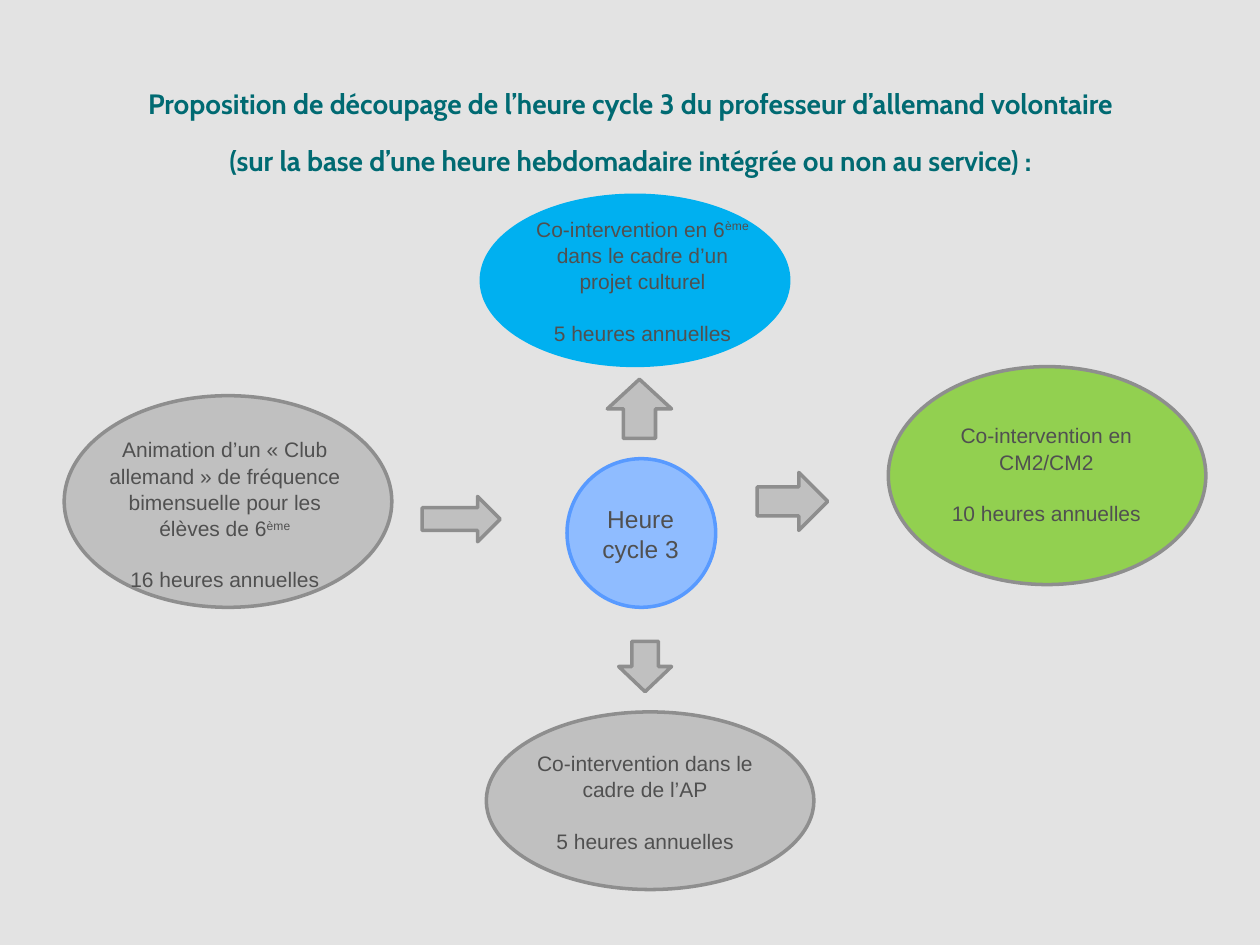
"""Build a slide showing how the cycle 3 teaching hour is divided."""
from pptx import Presentation
from pptx.dml.color import RGBColor
from pptx.enum import shapes, text
from pptx.util import Inches, Pt

GRAY, DARK_GRAY, TEXT_GRAY = "C0C0C0", "8E8E8E", "505050"
KIND = shapes.MSO_SHAPE


def color(value):
    return RGBColor.from_string(value)


def add_label(box, paragraphs, size):
    shape = slide.shapes.add_textbox(*map(Inches, box))
    frame = shape.text_frame
    frame.word_wrap = True
    frame.auto_size = text.MSO_AUTO_SIZE.SHAPE_TO_FIT_TEXT
    for index, wording in enumerate(paragraphs):
        paragraph = frame.paragraphs[0] if index == 0 else frame.add_paragraph()
        paragraph.alignment = text.PP_ALIGN.CENTER
        paragraph.line_spacing = 1.04
        if index:
            paragraph.space_before = Pt(14.4)
        for part, piece in enumerate(wording.split("^")):
            if not piece:
                continue
            run = paragraph.add_run()
            run.text = piece
            run.font.name = "Arial"
            run.font.size = Pt(size)
            run.font.color.rgb = color(TEXT_GRAY)
            if part % 2:
                run.font._element.set("baseline", "30000")


presentation = Presentation()
presentation.slide_width = Inches(10)
presentation.slide_height = Inches(7.5)
slide = presentation.slides.add_slide(presentation.slide_layouts[6])
slide.background.fill.solid()
slide.background.fill.fore_color.rgb = color("E3E3E3")

title = slide.shapes.add_textbox(Inches(0.2), Inches(0.44), Inches(9.61), Inches(1.02))
title_frame = title.text_frame
title_frame.word_wrap = True
title_frame.vertical_anchor = text.MSO_ANCHOR.MIDDLE
title_frame.margin_top = title_frame.margin_bottom = 0
title_frame.text = (
    "Proposition de découpage de l’heure cycle 3 du professeur d’allemand volontaire\v"
    "(sur la base d’une heure hebdomadaire intégrée ou non au service) :"
)
paragraph = title_frame.paragraphs[0]
paragraph.alignment = text.PP_ALIGN.CENTER
paragraph.line_spacing = Pt(33)
for run in paragraph.runs:
    run.font.name = "Cabin"
    run.font.size = Pt(16)
    run.font.bold = True
    run.font.color.rgb = color("006A72")

diagram = [
    (KIND.OVAL, (3.82, 1.55, 2.44, 1.35), "00B0F0", "00B0F0", 0),
    (KIND.OVAL, (7.05, 2.91, 2.52, 1.73), "92D050", DARK_GRAY, 0),
    (KIND.OVAL, (3.86, 5.65, 2.6, 1.41), GRAY, DARK_GRAY, 0),
    (KIND.OVAL, (0.51, 3.14, 2.6, 1.68), GRAY, DARK_GRAY, 0),
    (KIND.OVAL, (4.5, 3.64, 1.18, 1.18), "8FBCFF", "589AFF", 0),
    (KIND.RIGHT_ARROW, (6.01, 3.75, 0.56, 0.46), GRAY, DARK_GRAY, 0),
    (KIND.RIGHT_ARROW, (4.84, 2.99, 0.47, 0.51), GRAY, DARK_GRAY, 270),
    (KIND.RIGHT_ARROW, (3.35, 3.94, 0.62, 0.36), GRAY, DARK_GRAY, 0),
    (KIND.DOWN_ARROW, (4.91, 5.09, 0.42, 0.4), GRAY, DARK_GRAY, 0),
]
for kind, box, fill, line, rotation in diagram:
    shape = slide.shapes.add_shape(kind, *map(Inches, box))
    shape.shadow.inherit = False
    shape.rotation = rotation
    shape.fill.solid()
    shape.fill.fore_color.rgb = color(fill)
    shape.line.color.rgb = color(line)
    shape.line.width = Pt(2)

labels = [
    ((4.13, 1.66, 1.94, 1.14), 12,
     ["Co-intervention en 6^ème^ dans le cadre d’un projet culturel", "5 heures annuelles"]),
    ((7.36, 3.3, 1.89, 0.93), 12,
     ["Co-intervention en CM2/CM2", "10 heures annuelles"]),
    ((4.15, 5.9, 1.94, 0.93), 12,
     ["Co-intervention dans le cadre de l’AP", "5 heures annuelles"]),
    ((0.76, 3.41, 2.05, 1.35), 12,
     ["Animation d’un « Club allemand » de fréquence bimensuelle pour les élèves de 6^ème^",
      "16 heures annuelles"]),
    ((4.65, 3.94, 0.87, 0.58), 14, ["Heure cycle 3"]),
]
for box, size, paragraphs in labels:
    add_label(box, paragraphs, size)

presentation.save("out.pptx")
